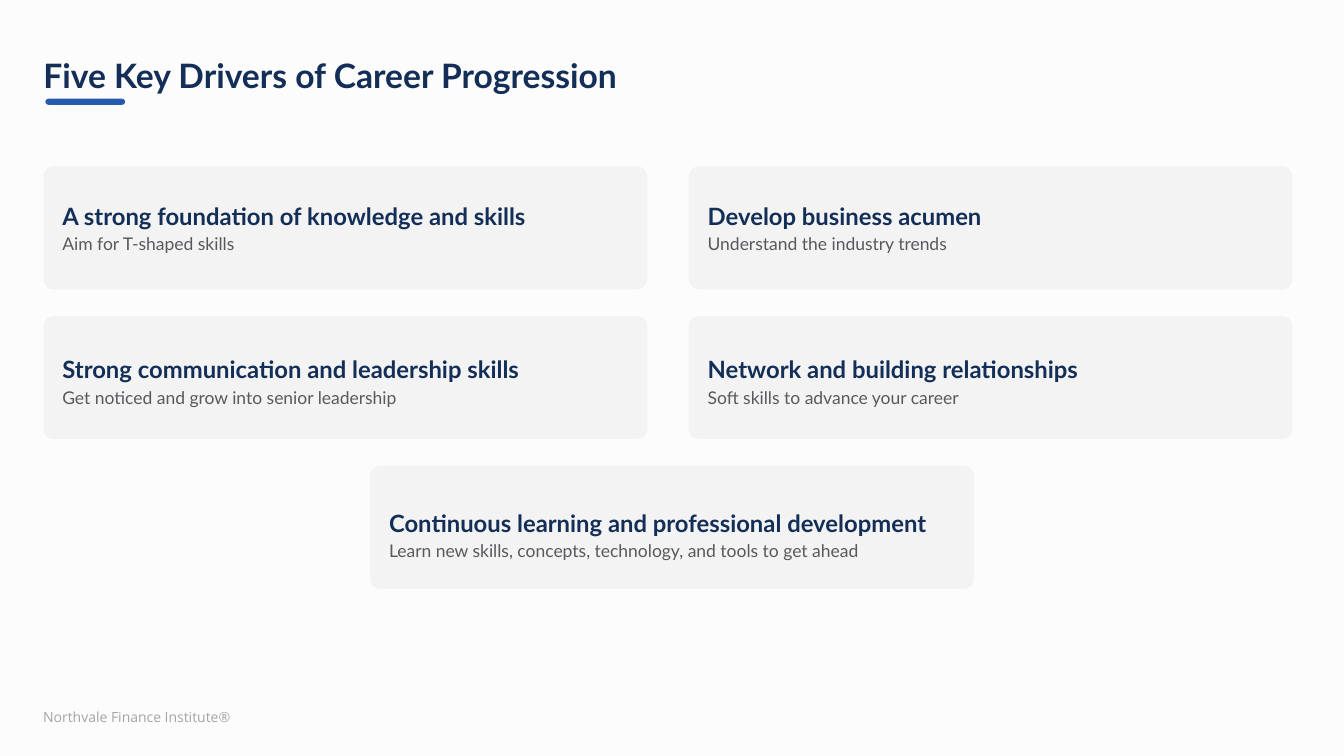
from pptx import Presentation
from pptx.dml.color import RGBColor
from pptx.enum.shapes import MSO_SHAPE
from pptx.enum.text import MSO_ANCHOR, PP_ALIGN
from pptx.util import Inches, Pt

COLORS = {
    "background": "FCFCFC",
    "navy": "132E57",
    "accent": "255BAC",
    "card": "F3F3F3",
    "detail": "57595D",
    "footer": "A5A5A5",
}
FORMATS = {
    "title": {"name": "Lato", "size": Pt(24), "bold": True, "color": "navy"},
    "heading": {"name": "Lato", "size": Pt(17), "bold": True, "color": "navy"},
    "detail": {"name": "Lato", "size": Pt(12.5), "bold": False, "color": "detail"},
    "footer": {"name": "Open Sans", "size": Pt(10), "bold": False, "color": "footer"},
}
CARD_WIDTH, CARD_HEIGHT = 5.99, 1.22
LEFT_COLUMN, CENTER_COLUMN, RIGHT_COLUMN = 0.43, 3.67, 6.83
FIRST_CARD_TOP, CARD_PITCH = 1.65, 1.485
FIRST_TEXT_TOP, TEXT_PITCH = 1.86, 1.52
DRIVERS = [
    (LEFT_COLUMN, 0, "A strong foundation of knowledge and skills", "Aim for T-shaped skills"),
    (LEFT_COLUMN, 1, "Strong communication and leadership skills",
     "Get noticed and grow into senior leadership"),
    (CENTER_COLUMN, 2, "Continuous learning and professional development",
     "Learn new skills, concepts, technology, and tools to get ahead"),
    (RIGHT_COLUMN, 0, "Develop business acumen", "Understand the industry trends"),
    (RIGHT_COLUMN, 1, "Network and building relationships", "Soft skills to advance your career"),
]


def write(paragraph, text, style):
    """Put text in a paragraph and give it the named format."""
    paragraph.alignment = PP_ALIGN.LEFT
    run = paragraph.add_run()
    run.text = text
    for attribute, value in FORMATS[style].items():
        if attribute == "color":
            run.font.color.rgb = RGBColor.from_string(COLORS[value])
        else:
            setattr(run.font, attribute, value)


def add_rounded_bar(left, top, width, height, color, rounding):
    bar = slide.shapes.add_shape(MSO_SHAPE.ROUNDED_RECTANGLE, Inches(left), Inches(top),
                                 Inches(width), Inches(height))
    bar.adjustments[0] = rounding
    bar.shadow.inherit = False
    bar.fill.solid()
    bar.fill.fore_color.rgb = RGBColor.from_string(COLORS[color])
    bar.line.fill.background()


presentation = Presentation()
presentation.slide_width = Inches(13.33)
presentation.slide_height = Inches(7.5)
slide = presentation.slides.add_slide(presentation.slide_layouts[5])
slide.background.fill.solid()
slide.background.fill.fore_color.rgb = RGBColor.from_string(COLORS["background"])

# Title with its accent bar
title = slide.shapes.title
title.left, title.top = Inches(0.33), Inches(0.38)
title.width, title.height = Inches(11.61), Inches(0.77)
title.text_frame.vertical_anchor = MSO_ANCHOR.MIDDLE
title_paragraph = title.text_frame.paragraphs[0]
title_paragraph.line_spacing = 0.9
write(title_paragraph, "Five Key Drivers of Career Progression", "title")
add_rounded_bar(0.45, 0.98, 0.79, 0.06, "accent", 0.5)

# Driver cards
for left, row, heading, detail in DRIVERS:
    add_rounded_bar(left, FIRST_CARD_TOP + row * CARD_PITCH, CARD_WIDTH, CARD_HEIGHT,
                    "card", 0.085)
    text_box = slide.shapes.add_textbox(Inches(left + 0.09),
                                        Inches(FIRST_TEXT_TOP + row * TEXT_PITCH),
                                        Inches(5.82), Inches(0.74))
    frame = text_box.text_frame
    frame.word_wrap = True
    for side in ("left", "top", "right", "bottom"):
        setattr(frame, f"margin_{side}", Inches(0.1))
    heading_paragraph, detail_paragraph = frame.paragraphs[0], frame.add_paragraph()
    for paragraph, text, style in ((heading_paragraph, heading, "heading"),
                                   (detail_paragraph, detail, "detail")):
        paragraph.line_spacing = 1.15
        write(paragraph, text, style)
    detail_paragraph.space_after = Pt(18)

# Footer
footer = slide.shapes.add_textbox(Inches(0.33), Inches(6.98), Inches(3.52), Inches(0.27))
footer.text_frame.word_wrap = True
write(footer.text_frame.paragraphs[0], "Northvale Finance Institute®", "footer")

presentation.save("out.pptx")
